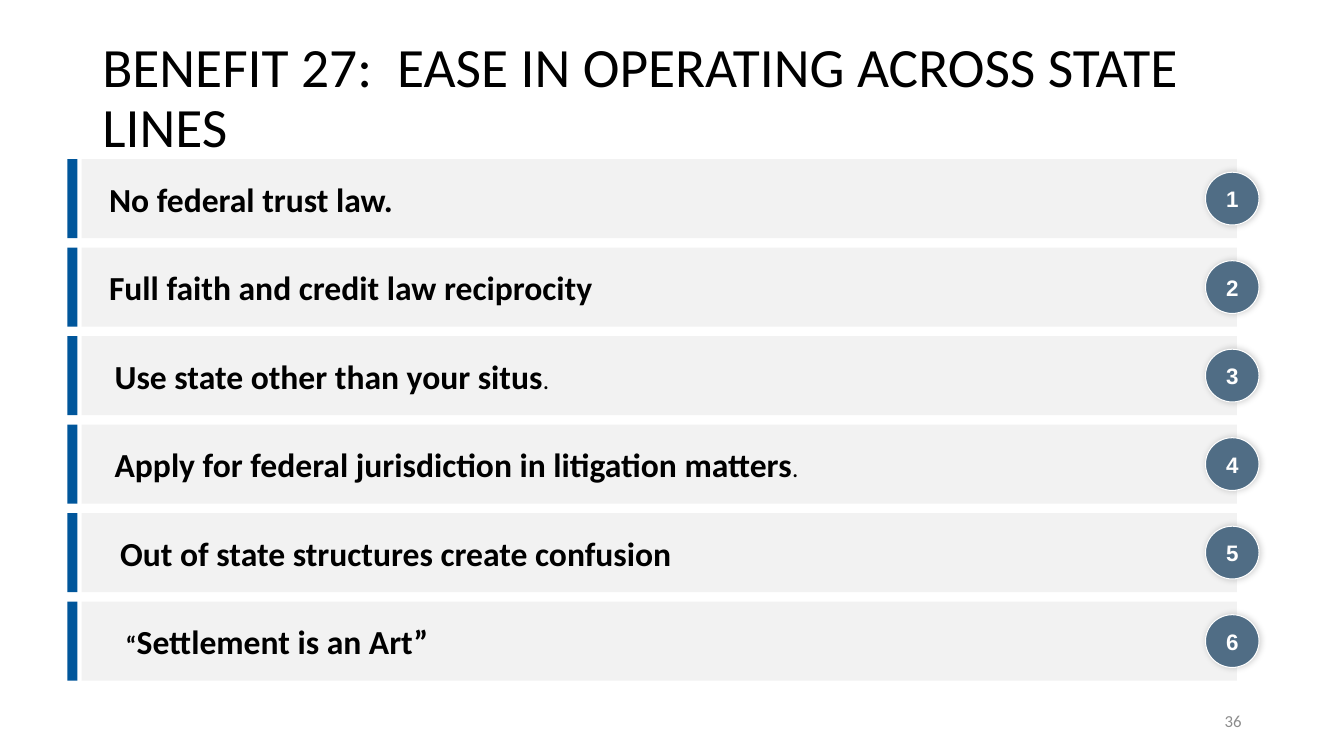
import pptx
import pptx.dml.color
import pptx.enum.shapes
import pptx.enum.text
import pptx.oxml
import pptx.oxml.ns
import pptx.util
from pptx.util import Cm

TITLE = "BENEFIT 27:  EASE IN OPERATING ACROSS STATE LINES"
PAGE_NUMBER = "36"
SMALL = {"size": 18}
STRONG = {"size": 24, "bold": True}
# Each row: indent step, then its runs of text
ROWS = [
    (0, [("No federal trust law.", STRONG)]),
    (0, [("Full faith and credit law reciprocity", STRONG)]),
    (1, [("Use state other than your situs", STRONG), (".", SMALL)]),
    (1, [("Apply for federal jurisdiction in litigation matters", STRONG), (".", SMALL)]),
    (2, [("Out of state structures create confusion", STRONG)]),
    (3, [("“", {"size": 18, "bold": True}), ("Settlement is an Art”", STRONG)]),
]
COLOURS = {
    "text": "000000",
    "panel": "F2F2F2",
    "accent": "00569B",
    "badge": "506D85",
    "white": "FFFFFF",
    "page": "8C8C8C",
}

ROW_TOP, ROW_HEIGHT, ROW_PITCH = 4.01, 1.99, 2.23
PANEL_LEFT, PANEL_WIDTH = 2.06, 29.11
ACCENT_LEFT, ACCENT_WIDTH = 1.7, 0.25
BADGE_LEFT, BADGE_WIDTH, BADGE_HEIGHT = 30.38, 1.35, 1.33
FIRST_INDENT, INDENT_STEP = 0.69, 0.14

SHAPES = pptx.enum.shapes.MSO_SHAPE
ALIGN = pptx.enum.text.PP_ALIGN


def rgb(name):
    return pptx.dml.color.RGBColor.from_string(COLOURS[name])


def write_text(shape, runs, font="Calibri", colour="text", align=ALIGN.LEFT,
               margins=(0.25, 0.13, 0.25, 0.13), line_spacing=None):
    """Fill a shape with one paragraph; margins are left, top, right, bottom in cm."""
    frame = shape.text_frame
    frame.word_wrap = True
    frame.vertical_anchor = pptx.enum.text.MSO_ANCHOR.MIDDLE
    (frame.margin_left, frame.margin_top,
     frame.margin_right, frame.margin_bottom) = map(Cm, margins)
    paragraph = frame.paragraphs[0]
    paragraph.alignment = align
    paragraph.line_spacing = line_spacing
    for text, style in runs:
        run = paragraph.add_run()
        run.text = text
        run.font.name = font
        run.font.size = pptx.util.Pt(style["size"])
        run.font.bold = style.get("bold", False)
        run.font.color.rgb = rgb(colour)


def add_filled(slide, kind, left, top, width, height, fill):
    shape = slide.shapes.add_shape(kind, Cm(left), Cm(top), Cm(width), Cm(height))
    shape.shadow.inherit = False
    shape.fill.solid()
    shape.fill.fore_color.rgb = rgb(fill)
    shape.line.fill.background()
    return shape


def add_soft_shadow(shape):
    effects = shape._element.spPr.find(pptx.oxml.ns.qn("a:effectLst"))
    effects.append(pptx.oxml.parse_xml(
        f'<a:outerShdw {pptx.oxml.ns.nsdecls("a")} blurRad="63500" dist="12700" dir="0"'
        ' algn="ctr" rotWithShape="0"><a:srgbClr val="000000"><a:alpha val="20000"/>'
        '</a:srgbClr></a:outerShdw>'))


def add_row(slide, index, indent, runs):
    top = ROW_TOP + index * ROW_PITCH
    panel = add_filled(slide, SHAPES.RECTANGLE, PANEL_LEFT, top,
                       PANEL_WIDTH, ROW_HEIGHT, "panel")
    write_text(panel, runs,
               margins=(FIRST_INDENT + indent * INDENT_STEP, 0.13, 1.02, 0.13))
    add_filled(slide, SHAPES.RECTANGLE, ACCENT_LEFT, top,
               ACCENT_WIDTH, ROW_HEIGHT, "accent")
    badge = add_filled(slide, SHAPES.OVAL, BADGE_LEFT,
                       top + (ROW_HEIGHT - BADGE_HEIGHT) / 2,
                       BADGE_WIDTH, BADGE_HEIGHT, "badge")
    badge.line.color.rgb = rgb("white")
    badge.line.width = pptx.util.Pt(0.75)
    add_soft_shadow(badge)
    write_text(badge, [(str(index + 1), {"size": 16, "bold": True})], font="Arial",
               colour="white", align=ALIGN.CENTER, margins=(0, 0, 0, 0))


def main():
    presentation = pptx.Presentation()
    presentation.slide_width = Cm(33.87)
    presentation.slide_height = Cm(19.05)
    slide = presentation.slides.add_slide(presentation.slide_layouts[6])

    title = slide.shapes.add_textbox(Cm(2.33), Cm(1.01), Cm(29.21), Cm(3))
    write_text(title, [(TITLE, {"size": 39.6})], line_spacing=0.9)
    page = slide.shapes.add_textbox(Cm(23.92), Cm(17.66), Cm(7.62), Cm(1.01))
    write_text(page, [(PAGE_NUMBER, {"size": 12})], colour="page", align=ALIGN.RIGHT)

    for index, (indent, runs) in enumerate(ROWS):
        add_row(slide, index, indent, runs)

    presentation.save("out.pptx")


if __name__ == "__main__":
    main()
